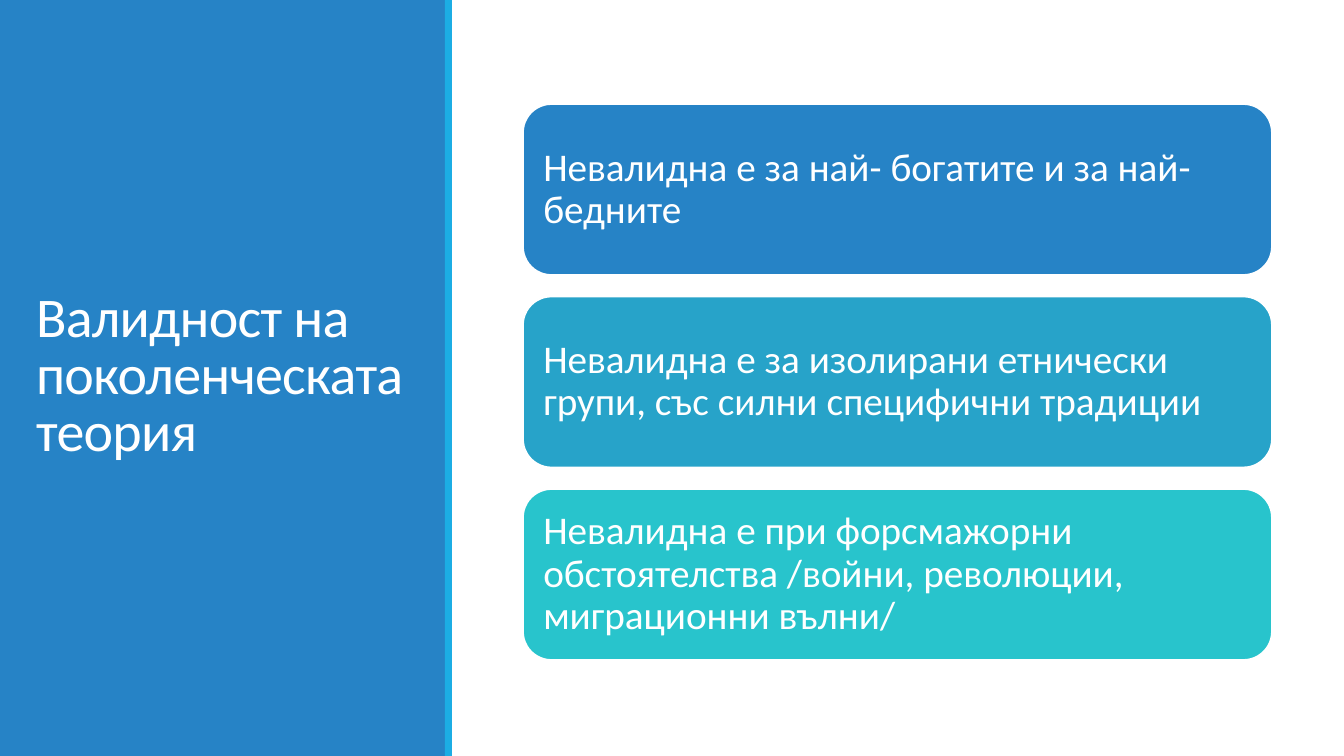
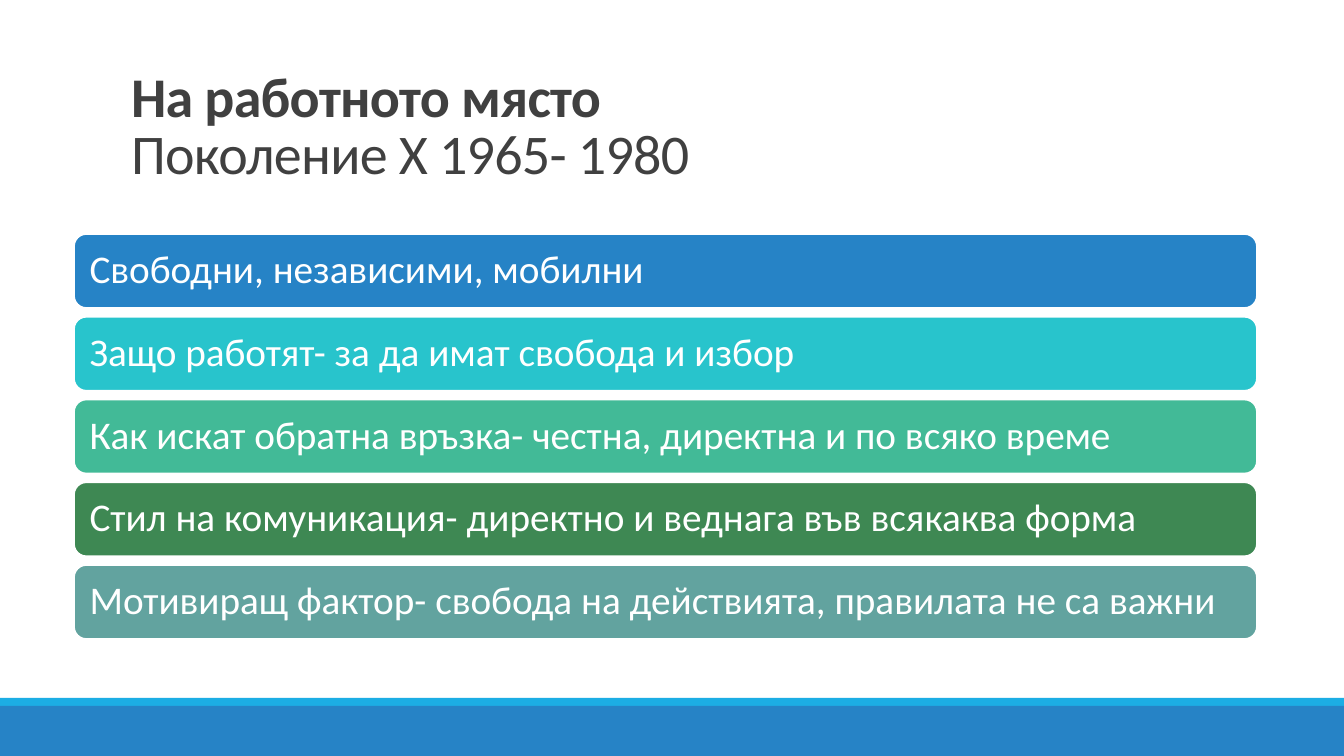
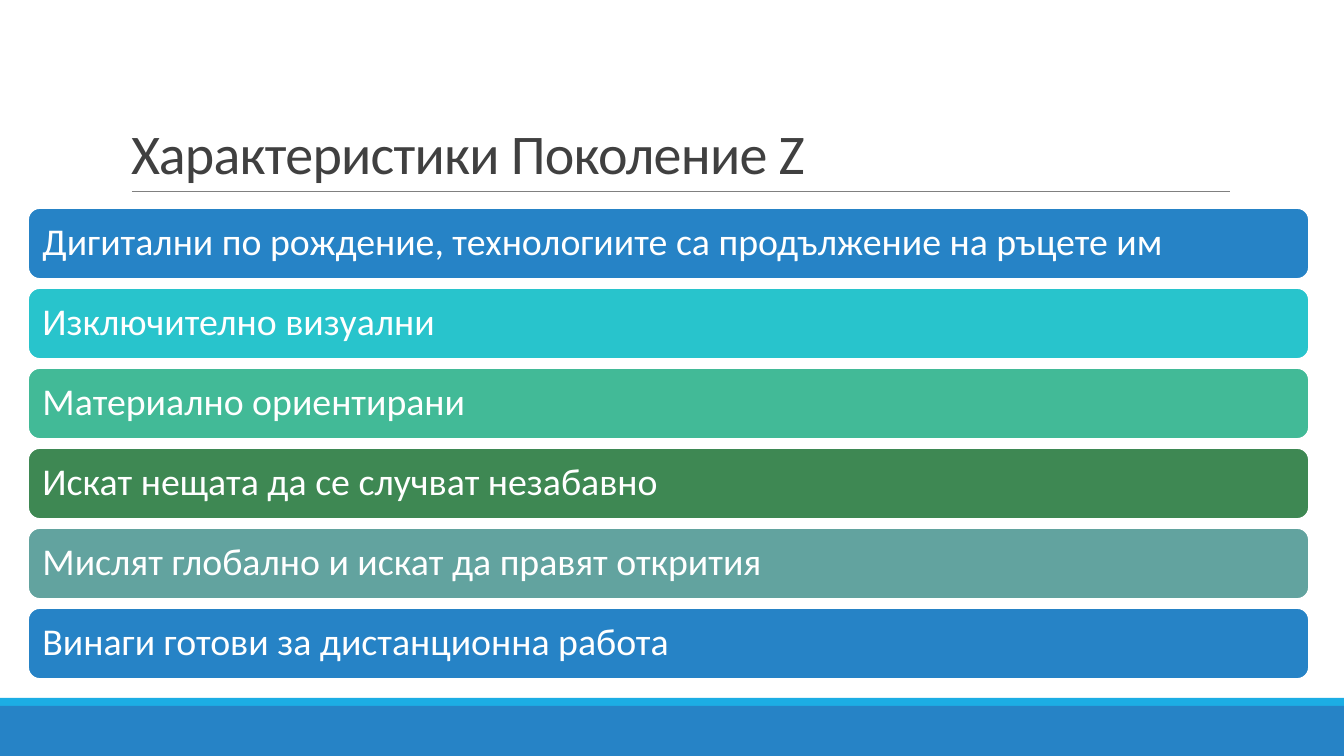
import copy

import pptx
import pptx.util
import pptx.dml.color
import pptx.enum.shapes
import pptx.enum.text
from lxml import etree

# ---- Content ----
COLOURS = {
    "blue": "2683C6", "sky": "1CADE4", "ocean": "27A3C9", "turquoise": "28C4CC",
    "mint": "42BA97", "green": "3E8853", "sage": "62A39F",
    "white": "FFFFFF", "ink": "404040", "rule": "808080",
}
CYCLE = ["blue", "turquoise", "mint", "green", "sage"]
FONT = "Calibri"
WIDTH, HEIGHT = 1344, 756

SIDE_TITLE = (26, 59, 394, 636)
TOP_TITLE = (121, 31, 1109, 160)
SIDE_BANDS = [((0, 0, 446, HEIGHT), "blue"), ((445, 0, 7, HEIGHT), "sky")]
FOOTER_BANDS = [((0, 698, WIDTH, 8), "sky"), ((0, 706, WIDTH, 50), "blue")]

# bars: left, width, first top, last top, height
SLIDES = [
    {
        "title": ["Валидност на поколенческата теория"],
        "side": True, "bold_first": False, "rule": False,
        "bars": (523, 749, 104, 489, 171), "size": 28, "inset": 12,
        "colours": ["blue", "ocean", "turquoise"],
        "items": [
            "Невалидна е за най- богатите и за най-бедните",
            "Невалидна е за изолирани етнически групи, със силни специфични традиции",
            "Невалидна е при форсмажорни обстоятелства /войни, революции, миграционни вълни/",
        ],
    },
    {
        "title": ["На работното място", "Поколение Х 1965- 1980"],
        "side": False, "bold_first": True, "rule": False,
        "bars": (74, 1183, 234, 565, 74), "size": 28, "inset": 12,
        "colours": CYCLE,
        "items": [
            "Свободни, независими, мобилни",
            "Защо работят- за да имат свобода и избор",
            "Как искат обратна връзка- честна, директна и по всяко време",
            "Стил на комуникация- директно и веднага във всякаква форма",
            "Мотивиращ фактор- свобода на действията, правилата не са важни",
        ],
    },
    {
        "title": ["Характеристики Поколение Z"],
        "side": False, "bold_first": False, "rule": True,
        "bars": (28, 1281, 208, 608, 71), "size": 27, "inset": 11,
        "colours": CYCLE,
        "items": [
            "Дигитални по рождение, технологиите са продължение на ръцете им",
            "Изключително визуални",
            "Материално ориентирани",
            "Искат нещата да се случват незабавно",
            "Мислят глобално и искат да правят открития",
            "Винаги готови за дистанционна работа",
        ],
    },
]


# ---- Helpers ----
def px(length):
    return pptx.util.Emu(round(length * 914400 / 100.8))


def rgb(name):
    return pptx.dml.color.RGBColor.from_string(COLOURS[name])


def format_run(run, size, colour, bold=False):
    run.font.name = FONT
    run.font.size = pptx.util.Pt(size)
    run.font.bold = bold
    run.font.color.rgb = rgb(colour)


def add_box(slide, preset, box, colour):
    shape = slide.shapes.add_shape(preset, *map(px, box))
    shape.shadow.inherit = False
    shape.fill.solid()
    shape.fill.fore_color.rgb = rgb(colour)
    shape.line.fill.background()
    return shape


def add_bands(slide, bands):
    for box, colour in bands:
        add_box(slide, pptx.enum.shapes.MSO_SHAPE.RECTANGLE, box, colour)


def set_title(slide, lines, side, bold_first):
    title = slide.shapes.title
    title.left, title.top, title.width, title.height = map(
        px, SIDE_TITLE if side else TOP_TITLE)
    slide.shapes._spTree.append(title._element)  # in front of the bands
    frame = title.text_frame
    frame.auto_size = pptx.enum.text.MSO_AUTO_SIZE.NONE
    anchors = pptx.enum.text.MSO_ANCHOR
    frame.vertical_anchor = anchors.MIDDLE if side else anchors.BOTTOM
    paragraph = frame.paragraphs[0]
    paragraph.text = "\v".join(lines)
    paragraph.alignment = pptx.enum.text.PP_ALIGN.LEFT
    paragraph.line_spacing = 0.85
    for index, run in enumerate(paragraph.runs):
        format_run(run, 40, "white" if side else "ink", bold_first and index == 0)
        run._r.get_or_add_rPr().set("spc", "-50")
    # A line break takes the size of the first run
    for line_break in paragraph._p.findall(pptx.oxml.ns.qn("a:br")):
        line_break.insert(0, copy.deepcopy(paragraph.runs[0]._r.rPr))


def add_rule(slide):
    rule = slide.shapes.add_connector(
        pptx.enum.shapes.MSO_CONNECTOR.STRAIGHT, px(132), px(191), px(1230), px(191))
    rule.line.color.rgb = rgb("rule")
    rule.line.width = pptx.util.Pt(0.5)
    etree.SubElement(rule._element.spPr, pptx.oxml.ns.qn("a:effectLst"))


def add_bars(slide, content):
    left, width, first_top, last_top, height = content["bars"]
    items, colours = content["items"], content["colours"]
    pitch = (last_top - first_top) / (len(items) - 1)
    for index, text in enumerate(items):
        bar = add_box(slide, pptx.enum.shapes.MSO_SHAPE.ROUNDED_RECTANGLE,
                      (left, first_top + index * pitch, width, height),
                      colours[index % len(colours)])
        bar.line.color.rgb = rgb("white")
        bar.line.width = pptx.util.Pt(1.25)
        frame = bar.text_frame
        frame.word_wrap = True
        frame.vertical_anchor = pptx.enum.text.MSO_ANCHOR.MIDDLE
        frame.margin_left = frame.margin_right = px(content["inset"])
        frame.margin_top = frame.margin_bottom = px(content["inset"])
        frame.text = text
        paragraph = frame.paragraphs[0]
        paragraph.alignment = pptx.enum.text.PP_ALIGN.LEFT
        paragraph.line_spacing = 0.9
        format_run(paragraph.runs[0], content["size"], "white")


# ---- Build ----
def main():
    presentation = pptx.Presentation()
    presentation.slide_width, presentation.slide_height = px(WIDTH), px(HEIGHT)
    title_only = presentation.slide_layouts[5]
    for content in SLIDES:
        slide = presentation.slides.add_slide(title_only)
        add_bands(slide, SIDE_BANDS if content["side"] else FOOTER_BANDS)
        set_title(slide, content["title"], content["side"], content["bold_first"])
        if content["rule"]:
            add_rule(slide)
        add_bars(slide, content)
    presentation.save("out.pptx")


if __name__ == "__main__":
    main()
